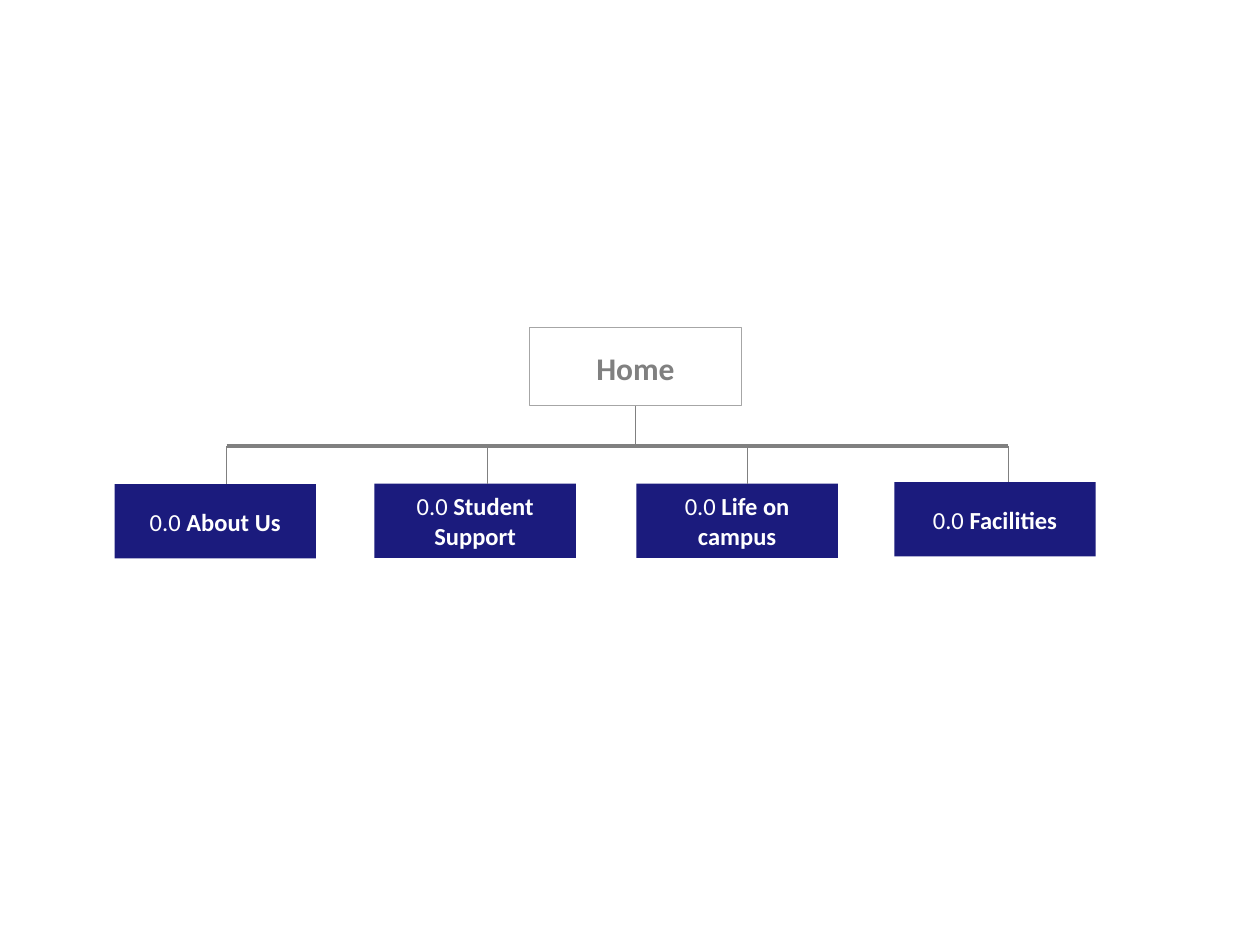
import pptx
import pptx.util
import pptx.dml.color
import pptx.enum.shapes
import pptx.enum.text
import pptx.oxml.ns
import lxml.etree

Cm = pptx.util.Cm
Pt = pptx.util.Pt
RGBColor = pptx.dml.color.RGBColor
NAVY = RGBColor(0x1B, 0x1B, 0x7D)
WHITE = RGBColor(0xFF, 0xFF, 0xFF)
GREY = RGBColor(0x80, 0x80, 0x80)
LIGHT_GREY = RGBColor(0xA6, 0xA6, 0xA6)
RECTANGLE = pptx.enum.shapes.MSO_SHAPE.RECTANGLE

deck = pptx.Presentation()
deck.slide_width, deck.slide_height = Cm(25.4), Cm(19.05)
page = deck.slides.add_slide(deck.slide_layouts[6])


def add_line(x1, y1, x2, y2, width=0.25):
    line = page.shapes.add_connector(
        pptx.enum.shapes.MSO_CONNECTOR.STRAIGHT, Cm(x1), Cm(y1), Cm(x2), Cm(y2))
    line.line.color.rgb = GREY
    line.line.width = Pt(width)
    lxml.etree.SubElement(line._element.spPr, pptx.oxml.ns.qn("a:effectLst"))
    return line


def write_centred(box, spans, size, colour):
    frame = box.text_frame
    frame.word_wrap = True
    frame.vertical_anchor = pptx.enum.text.MSO_ANCHOR.MIDDLE
    para = frame.paragraphs[0]
    para.alignment = pptx.enum.text.PP_ALIGN.CENTER
    for text, bold in spans:
        span = para.add_run()
        span.text = text
        span.font.name = "Calibri"
        span.font.size = Pt(size)
        span.font.bold = bold
        span.font.color.rgb = colour


# Horizontal rule joining the sections
rule_y = 8.99
add_line(4.57, rule_y, 20.32, rule_y, width=0)

# Section boxes, each with its drop line: label, left, top, drop line x
sections = [
    ("About Us", 2.31, 9.76, 4.57),
    ("Student Support", 7.55, 9.75, 9.83),
    ("Life on campus", 12.83, 9.75, 15.06),
    ("Facilities", 18.03, 9.72, 20.32),
]
for label, left, top, drop_x in sections:
    box = page.shapes.add_shape(RECTANGLE, Cm(left), Cm(top), Cm(4.06), Cm(1.5))
    box.shadow.inherit = False
    box.fill.solid()
    box.fill.fore_color.rgb = NAVY
    box.line.fill.background()
    write_centred(box, [("0.0 ", False), (label, True)], 14, WHITE)
    add_line(drop_x, rule_y, drop_x, top)

# Home box, its caption and the stem down to the rule
home = page.shapes.add_shape(RECTANGLE, Cm(10.67), Cm(6.6), Cm(4.28), Cm(1.58))
home.shadow.inherit = False
home.fill.background()
home.line.color.rgb = LIGHT_GREY
home.line.width = Pt(0.25)
caption = page.shapes.add_textbox(Cm(11.6), Cm(7.02), Cm(2.42), Cm(0.8))
write_centred(caption, [("Home", True)], 18, GREY)
stem = add_line(12.81, 8.18, 12.81, rule_y)
stem.begin_connect(home, 2)

deck.save("out.pptx")
